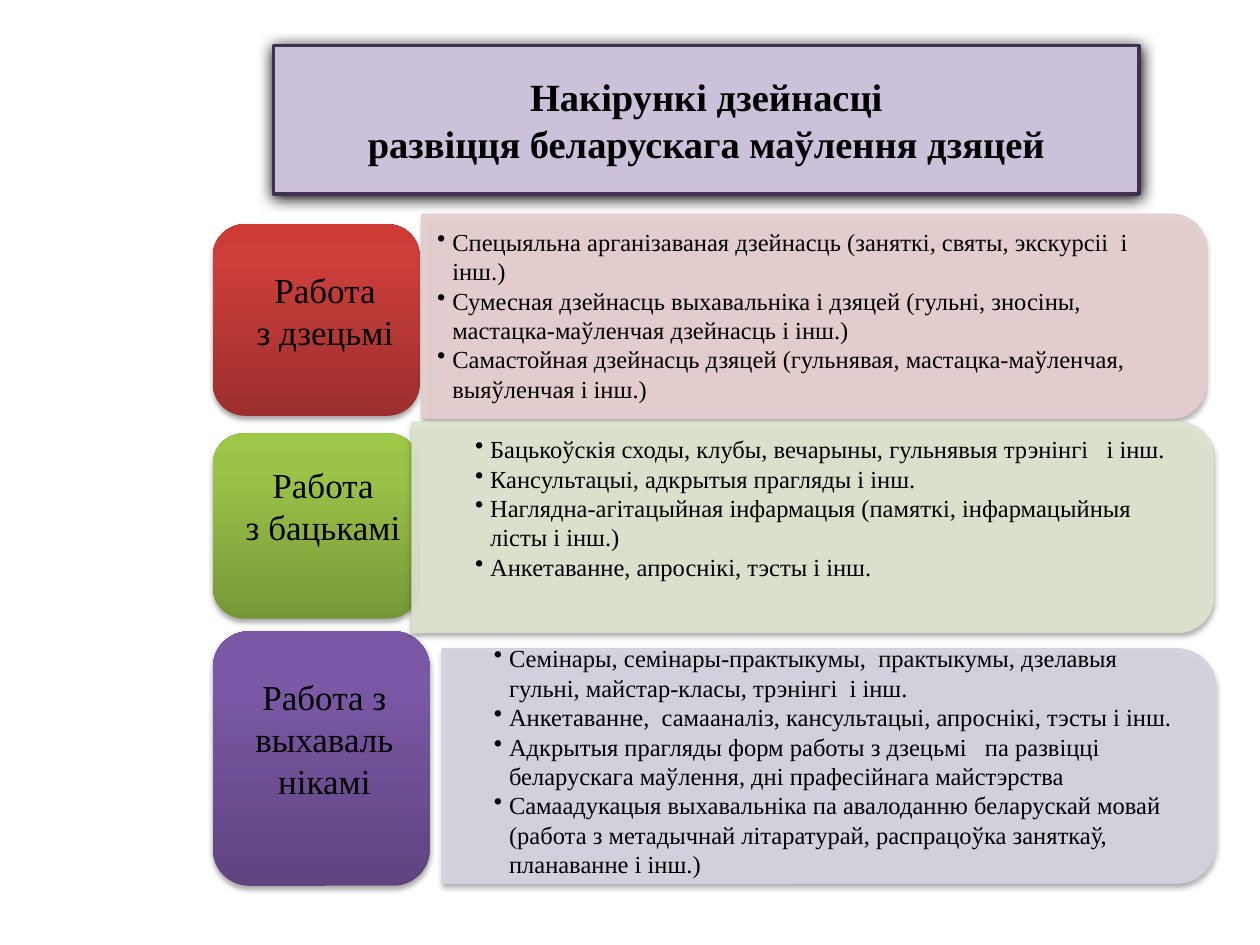
from lxml import etree
from pptx import Presentation, oxml
from pptx import util as u
from pptx.dml import color
from pptx.enum import shapes, text
from pptx.oxml import ns

THEME = {
    "font": "Times New Roman", "ink": "000000",
    "head": 22, "label": 20, "body": 14,
    "fill": "CCC1DA", "edge": "403152",
    "red": {"grad": ["9C2F2D", "CB3E3A", "CE3B37"], "pale": "E8D0D0", "rim": "E3CBCB"},
    "green": {"grad": ["779737", "9BC348", "9DC746"], "pale": "DEE7D1", "rim": "D9E2CC"},
    "plum": {"grad": ["5F4480", "7B58A6", "7C57A8"], "pale": "D8D3E0", "rim": "D3CEDB"},
}
TITLE = ["Накірункі дзейнасці", "развіцця беларускага маўлення дзяцей"]
ROWS = [
    {
        "hue": "red", "label": ["Работа", "з дзецьмi"],
        "tile": (1.69, 1.78, 1.64, 1.52), "name": (1.93, 1.78, 1.3, 1.37),
        "panel": (3.35, 1.7, 6.22, 1.62), "list": (3.2, 1.72, 6.4, 1.56),
        "items": [
            "Спецыяльна арганiзаваная дзейнасць (заняткi, святы, экскурсii  i iнш.)",
            "Сумесная дзейнасць выхавальнiка i дзяцей (гульні, зносiны, мастацка-маўленчая дзейнасць i iнш.)",
            "Самастойная дзейнасць дзяцей (гульнявая, мастацка-маўленчая, выяўленчая i iнш.)",
        ],
    },
    {
        "hue": "green", "label": ["Работа", "з бацькамi"],
        "tile": (1.69, 3.44, 1.64, 1.47), "name": (1.85, 3.35, 1.43, 1.33),
        "panel": (3.27, 3.35, 6.36, 1.67), "list": (3.5, 3.28, 6.25, 1.5),
        "items": [
            "Бацькоўскiя сходы, клубы, вечарыны, гульнявыя трэнiнгi   i iнш.",
            "Кансультацыi, адкрытыя прагляды i iнш.",
            "Наглядна-агiтацыйная iнфармацыя (памяткi, iнфармацыйныя лiсты i iнш.)",
            "Анкетаванне, апроснiкi, тэсты i iнш.",
        ],
    },
    {
        "hue": "plum", "label": ["Работа з выхавальнiкамi"],
        "tile": (1.69, 5.01, 1.72, 2.02), "name": (1.91, 4.95, 1.33, 1.82),
        "panel": (3.51, 5.15, 6.14, 1.86), "list": (3.65, 5.01, 6, 2.06),
        "items": [
            "Семiнары, семiнары-практыкумы,  практыкумы, дзелавыя гульнi, майстар-класы, трэнiнгi  i iнш.",
            "Анкетаванне,  самааналiз, кансультацыi, апроснiкi, тэсты i iнш.",
            "Адкрытыя прагляды форм работы з дзецьмi   па развіццi беларускага маўлення, дні прафесійнага майстэрства",
            "Самаадукацыя выхавальнiка па авалоданню беларускай мовай  (работа з метадычнай лiтаратурай, распрацоўка заняткаў, планаванне i iнш.)",
        ],
    },
]


def rgb(hue):
    return color.RGBColor.from_string(hue)


def node(xml):
    return oxml.parse_xml(xml.replace(">", f" {ns.nsdecls('a')}>", 1))


def place(shape, box):
    shape.left, shape.top, shape.width, shape.height = map(u.Inches, box)


def write(shape, lines, size, bold=False, bullet=False, pad=None):
    frame = shape.text_frame
    frame.word_wrap = True
    frame.vertical_anchor = text.MSO_ANCHOR.MIDDLE
    if pad:
        frame.margin_left = frame.margin_right = u.Inches(pad[0])
        frame.margin_top = frame.margin_bottom = u.Inches(pad[1])
    for i, line in enumerate(lines):
        para = frame.paragraphs[0] if i == 0 else frame.add_paragraph()
        para.alignment = text.PP_ALIGN.LEFT if bullet else text.PP_ALIGN.CENTER
        if bullet:
            para.level = 1
            prop = para._p.get_or_add_pPr()
            prop.set("marL", str(u.Inches(0.12)))
            prop.set("indent", str(u.Inches(-0.12)))
            etree.SubElement(prop, ns.qn("a:buChar")).set("char", "•")
        run = para.add_run()
        run.text = line
        font = run.font
        font.name, font.size, font.bold = THEME["font"], u.Pt(size), bold
        font.color.rgb = rgb(THEME["ink"])


def shade(shape, blur=3.1, dist=1.8, alpha=35):
    shape.shadow.inherit = False
    shape._element.spPr.find(ns.qn("a:effectLst")).append(node(
        f'<a:outerShdw blurRad="{u.Pt(blur)}" dist="{u.Pt(dist)}" dir="5400000" rotWithShape="0">'
        f'<a:srgbClr val="{THEME["ink"]}"><a:alpha val="{alpha * 1000}"/></a:srgbClr></a:outerShdw>'))


def paint(shape, fill, edge, width, alpha=None):
    shape.fill.solid()
    shape.fill.fore_color.rgb = rgb(fill)
    shape.line.color.rgb = rgb(edge)
    shape.line.width = u.Pt(width)
    if alpha:
        for tone in shape._element.spPr.iter(ns.qn("a:srgbClr")):
            etree.SubElement(tone, ns.qn("a:alpha")).set("val", str(alpha * 1000))


def tile(slide, box, hues):
    shape = slide.shapes.add_shape(shapes.MSO_SHAPE.ROUNDED_RECTANGLE, *map(u.Inches, box))
    stops = "".join(f'<a:gs pos="{pos * 1000}"><a:srgbClr val="{hue}"/></a:gs>'
                    for pos, hue in zip((0, 80, 100), hues))
    shape._element.spPr.find(ns.qn("a:prstGeom")).addnext(node(
        f'<a:gradFill rotWithShape="1"><a:gsLst>{stops}</a:gsLst>'
        '<a:lin ang="16200000" scaled="0"/></a:gradFill>'))
    shape.line.fill.background()
    shade(shape)


def panel(slide, box, look):
    left, top, wide, high = box
    turned = (left + (wide - high) / 2, top + (high - wide) / 2, high, wide)
    shape = slide.shapes.add_shape(shapes.MSO_SHAPE.ROUND_2_SAME_RECTANGLE, *map(u.Inches, turned))
    shape.rotation = 90
    paint(shape, look["pale"], look["rim"], 0.75, alpha=90)
    shade(shape)


def note(slide, box, lines, size, **form):
    write(slide.shapes.add_textbox(*map(u.Inches, box)), lines, size, **form)


def main():
    deck = Presentation()
    deck.slide_width, deck.slide_height = u.Inches(10), u.Inches(7.5)
    slide = deck.slides.add_slide(deck.slide_layouts[5])
    title = slide.shapes.title
    place(title, (2.17, 0.36, 6.87, 1.18))
    title._element.spPr.append(node('<a:prstGeom prst="roundRect"><a:avLst/></a:prstGeom>'))
    paint(title, THEME["fill"], THEME["edge"], 2)
    shade(title, blur=8.5, dist=1, alpha=100)
    write(title, TITLE, THEME["head"], bold=True)
    for row in ROWS:
        tile(slide, row["tile"], THEME[row["hue"]]["grad"])
        note(slide, row["name"], row["label"], THEME["label"], pad=(0.08, 0.04))
    for row in ROWS:
        panel(slide, row["panel"], THEME[row["hue"]])
        note(slide, row["list"], row["items"], THEME["body"], bullet=True, pad=(0.27, 0.14))
    deck.save("out.pptx")


if __name__ == "__main__":
    main()
